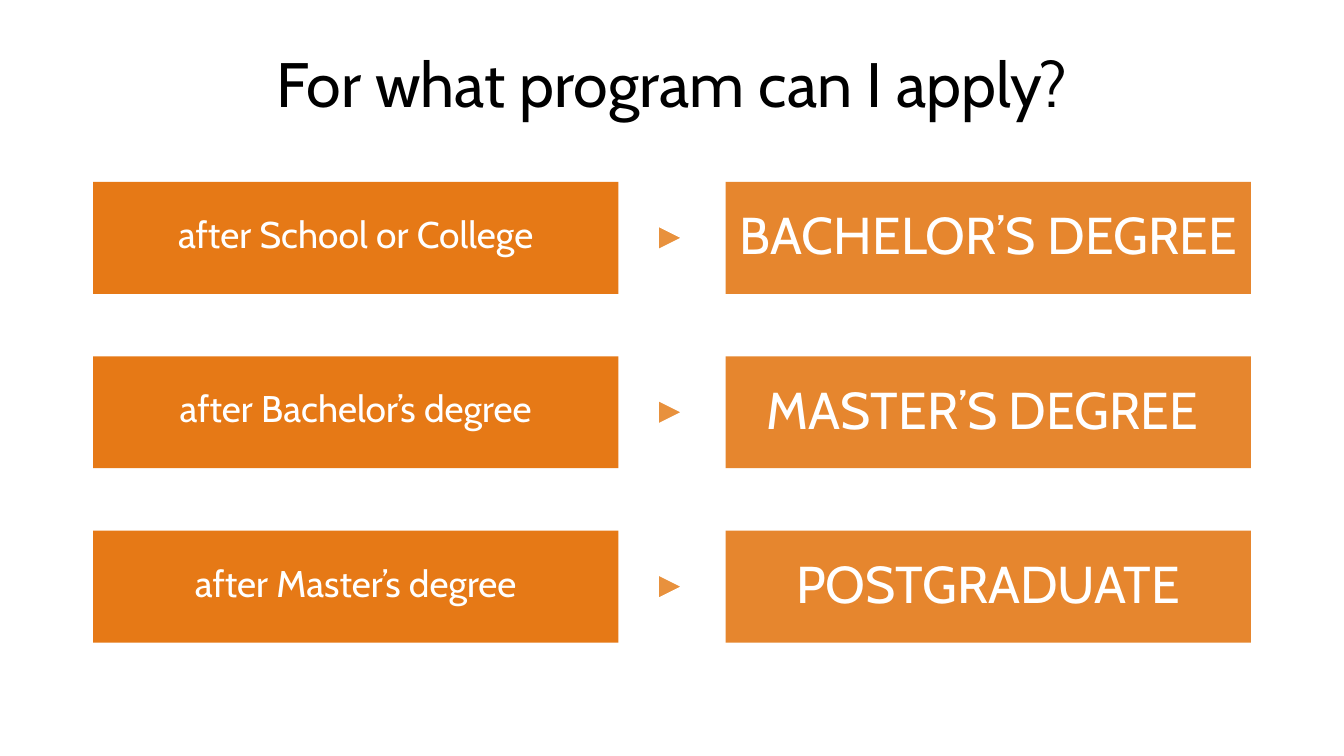
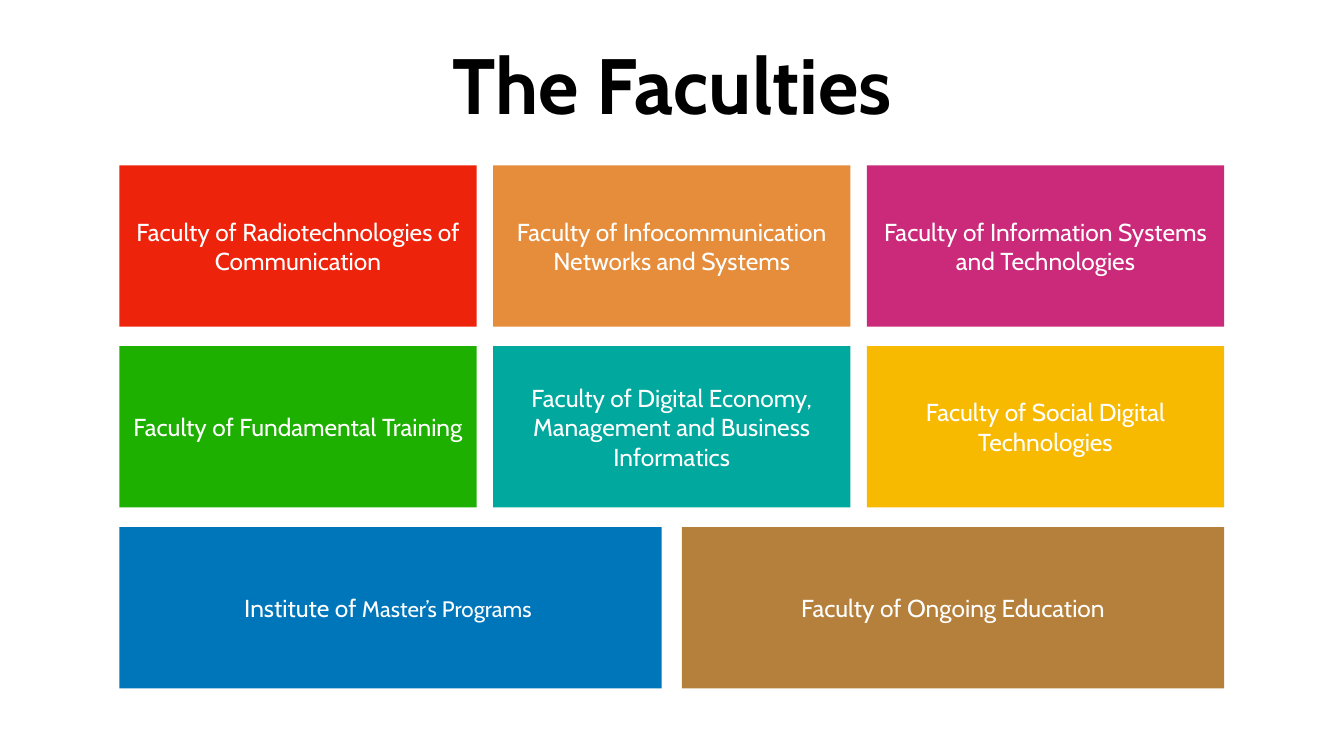
from pptx import Presentation
from pptx.dml.color import RGBColor
from pptx.enum.shapes import MSO_SHAPE
from pptx.enum.text import MSO_ANCHOR, PP_ALIGN
from pptx.util import Inches, Pt

FONT = "Cabin"
BLACK = RGBColor(0x00, 0x00, 0x00)
WHITE = RGBColor(0xFF, 0xFF, 0xFF)
DARK_ORANGE = RGBColor(0xE6, 0x79, 0x16)
ORANGE = RGBColor(0xE6, 0x86, 0x2E)
ARROW_ORANGE = RGBColor(0xE8, 0x91, 0x3D)
RED = RGBColor(0xEE, 0x23, 0x0C)
APRICOT = RGBColor(0xE6, 0x8D, 0x3C)
MAGENTA = RGBColor(0xCB, 0x2A, 0x7A)
GREEN = RGBColor(0x1E, 0xB0, 0x01)
TEAL = RGBColor(0x00, 0xA8, 0x9D)
YELLOW = RGBColor(0xF7, 0xBA, 0x01)
BLUE = RGBColor(0x00, 0x76, 0xBA)
BROWN = RGBColor(0xB5, 0x80, 0x3C)

SLIDE_W, SLIDE_H = 26.67, 15
TITLE_BOX = (1.85, 0.39, 22.97, 2.5)

PROGRAMS_BOX = (1.85, 3.61, 22.97, 9.14)
PROGRAMS = [
    ("after School or College", "BACHELOR’S DEGREE"),
    ("after Bachelor’s degree", "MASTER’S DEGREE "),
    ("after Master’s degree", "POSTGRADUATE"),
]

FACULTIES_BOX = (2.37, 3.28, 21.92, 10.38)
# Each row: gap between its tiles, then (colour, text runs with sizes) per tile.
FACULTY_ROWS = [
    (0.33, [
        (RED, [("Faculty of Radiotechnologies of Communication", 35)]),
        (APRICOT, [("Faculty of Infocommunication Networks and Systems", 35)]),
        (MAGENTA, [("Faculty of Information Systems and Technologies", 35)]),
    ]),
    (0.33, [
        (GREEN, [("Faculty of Fundamental Training", 35)]),
        (TEAL, [("Faculty of Digital Economy, Management and Business Informatics", 35)]),
        (YELLOW, [("Faculty of Social Digital Technologies", 35)]),
    ]),
    (0.4, [
        (BLUE, [("Institute of ", 35), ("Master’s Programs ", 32)]),
        (BROWN, [("Faculty of Ongoing Education", 35)]),
    ]),
]


def write(sp, runs, color, inset, spacing=None, bold=False):
    """Fill a shape with one centred paragraph made of (text, size) runs."""
    tf = sp.text_frame
    tf.word_wrap = True
    tf.vertical_anchor = MSO_ANCHOR.MIDDLE
    tf.margin_left = tf.margin_right = Inches(inset)
    tf.margin_top = tf.margin_bottom = Inches(inset)
    p = tf.paragraphs[0]
    p.alignment = PP_ALIGN.CENTER
    if spacing:
        p.line_spacing = spacing
    for text, size in runs:
        r = p.add_run()
        r.text = text
        r.font.name = FONT
        r.font.size = Pt(size)
        r.font.bold = bold
        r.font.color.rgb = color


def add_title(slide, text, size, bold=False):
    sp = slide.shapes.add_textbox(*map(Inches, TITLE_BOX))
    write(sp, [(text, size)], BLACK, 0.06, bold=bold)


def add_tile(slide, box, fill, runs, inset, spacing=None):
    sp = slide.shapes.add_shape(MSO_SHAPE.RECTANGLE, *map(Inches, box))
    sp.shadow.inherit = False
    sp.fill.solid()
    sp.fill.fore_color.rgb = fill
    sp.line.fill.background()
    write(sp, runs, WHITE, inset, spacing)


def add_arrow(slide, x, y, side):
    """Draw a triangle pointing right inside a square."""
    builder = slide.shapes.build_freeform(Inches(x + side), Inches(y + side / 2))
    builder.add_line_segments([(Inches(x), Inches(y + side)), (Inches(x), Inches(y))])
    sp = builder.convert_to_shape()
    sp.shadow.inherit = False
    sp.fill.solid()
    sp.fill.fore_color.rgb = ARROW_ORANGE
    sp.line.color.rgb = WHITE
    sp.line.width = Pt(5)


def add_programs(slide, box):
    left, top, width, height = box
    tile_w, tile_h, arrow = 10.42, 2.22, 0.54
    pitch = (height - tile_h) / (len(PROGRAMS) - 1)
    for i, (before, program) in enumerate(PROGRAMS):
        y = top + i * pitch
        add_tile(slide, (left + width - tile_w, y, tile_w, tile_h), ORANGE,
                 [(program, 74)], 0, 0.9)
        add_tile(slide, (left, y, tile_w, tile_h), DARK_ORANGE, [(before, 53)], 0, 0.8)
        add_arrow(slide, left + 11.19, y + (tile_h - arrow) / 2, arrow)


def add_faculties(slide, box):
    left, top, width, height = box
    tile_h = 3.2
    pitch = (height - tile_h) / (len(FACULTY_ROWS) - 1)
    for i, (gap, tiles) in enumerate(FACULTY_ROWS):
        tile_w = (width - gap * (len(tiles) - 1)) / len(tiles)
        for j, (fill, runs) in enumerate(tiles):
            x = left + j * (tile_w + gap)
            add_tile(slide, (x, top + i * pitch, tile_w, tile_h), fill, runs, 0.21)


def main():
    prs = Presentation()
    prs.slide_width, prs.slide_height = Inches(SLIDE_W), Inches(SLIDE_H)
    blank = prs.slide_layouts[6]

    slide = prs.slides.add_slide(blank)
    add_title(slide, "For what program can I apply?", 89.6)
    add_programs(slide, PROGRAMS_BOX)

    slide = prs.slides.add_slide(blank)
    add_title(slide, "The Faculties", 112, bold=True)
    add_faculties(slide, FACULTIES_BOX)

    prs.save("out.pptx")


if __name__ == "__main__":
    main()
